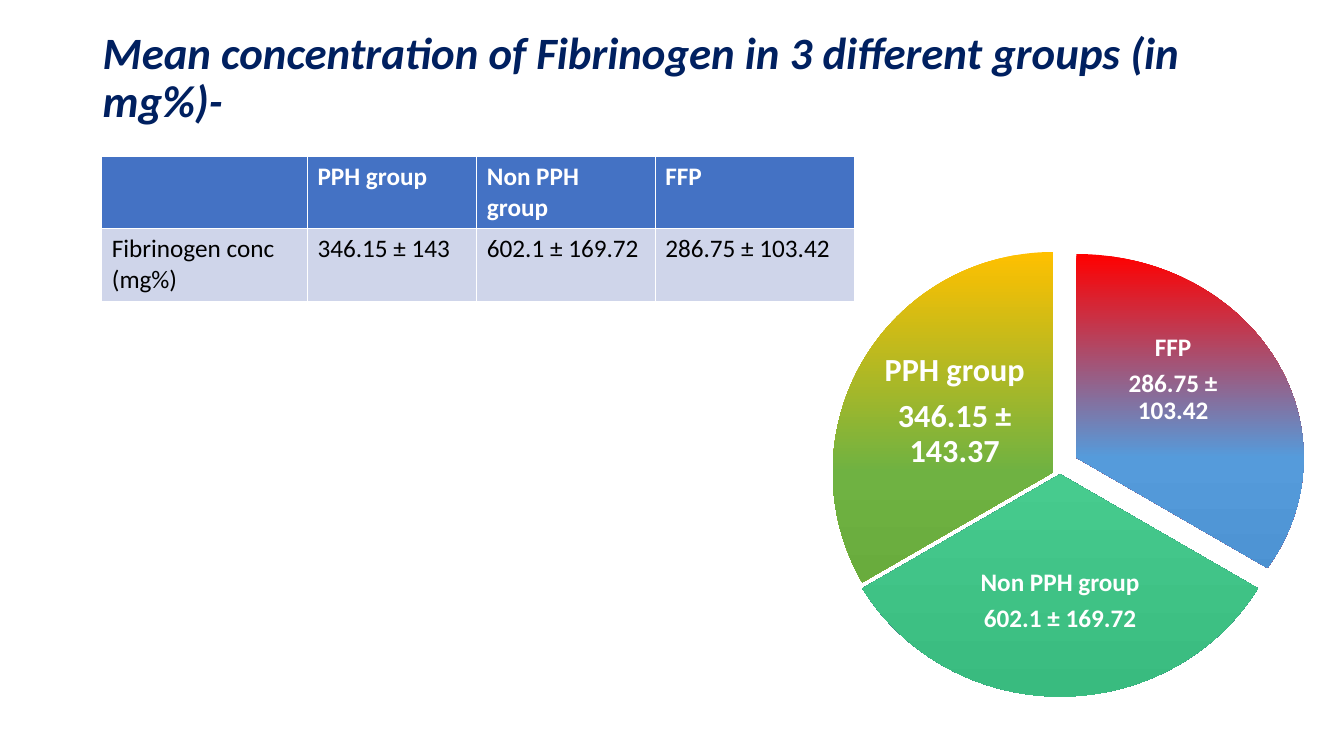
"""Build a slide comparing mean fibrinogen concentration in three groups."""
from copy import deepcopy

from pptx import Presentation
from pptx.dml.color import RGBColor
from pptx.enum.shapes import MSO_SHAPE
from pptx.enum.text import MSO_ANCHOR, PP_ALIGN
from pptx.util import Inches, Pt

NAVY = RGBColor(0x00, 0x20, 0x60)
WHITE = RGBColor(0xFF, 0xFF, 0xFF)
BLACK = RGBColor(0x00, 0x00, 0x00)
HEADER_BLUE = RGBColor(0x44, 0x72, 0xC4)
ROW_BLUE = RGBColor(0xCF, 0xD5, 0xEA)
RED = RGBColor(0xFF, 0x00, 0x00)
SKY = RGBColor(0x55, 0x9B, 0xDB)
SKY_DARK = RGBColor(0x44, 0x8A, 0xCA)
MINT = RGBColor(0x47, 0xCB, 0x8E)
MINT_DARK = RGBColor(0x39, 0xBB, 0x7F)
GOLD = RGBColor(0xFF, 0xC0, 0x00)
GREEN = RGBColor(0x6F, 0xB2, 0x42)
GREEN_DARK = RGBColor(0x62, 0xA3, 0x36)


def write(p, text, size=18, color=WHITE, bold=True, italic=False):
    r = p.add_run()
    r.text = text
    r.font.name = "Calibri"
    r.font.size = Pt(size)
    r.font.color.rgb = color
    r.font.bold = bold
    r.font.italic = italic


prs = Presentation()
prs.slide_width, prs.slide_height = Inches(13.33), Inches(7.5)
s = prs.slides.add_slide(prs.slide_layouts[6])

title = s.shapes.add_textbox(Inches(0.92), Inches(0.4), Inches(11.76), Inches(0.77))
tf = title.text_frame
tf.word_wrap = True
tf.vertical_anchor = MSO_ANCHOR.MIDDLE
tf.paragraphs[0].line_spacing = 0.9
write(tf.paragraphs[0], "Mean concentration of Fibrinogen in 3 different groups (in mg%)-",
      size=32, color=NAVY, italic=True)

rows = [
    ["", "PPH group", "Non PPH group", "FFP"],
    ["Fibrinogen conc (mg%)", "346.15 ± 143", "602.1 ± 169.72", "286.75 ± 103.42"],
]
row_formats = [(HEADER_BLUE, WHITE, True), (ROW_BLUE, BLACK, False)]
table = s.shapes.add_table(2, 4, Inches(1.01), Inches(1.55), Inches(7.47), Inches(1.44)).table
for column, width in zip(table.columns, [2.04, 1.68, 1.77, 1.98]):
    column.width = Inches(width)
for row, texts, (fill, color, bold) in zip(table.rows, rows, row_formats):
    row.height = Inches(0.72)
    for cell, text in zip(row.cells, texts):
        cell.fill.solid()
        cell.fill.fore_color.rgb = fill
        write(cell.text_frame.paragraphs[0], text, color=color, bold=bold)

slices = [
    ((8.42, 2.52, 4.51, 4.04), 270, 30, (RED, SKY, SKY_DARK)),
    ((8.23, 2.5, 4.57, 4.41), 30, 150, (NAVY, MINT, MINT_DARK)),
    ((8.26, 2.5, 4.37, 4.37), 150, 270, (GOLD, GREEN, GREEN_DARK)),
]
for box, start, end, colors in slices:
    sp = s.shapes.add_shape(MSO_SHAPE.PIE, *[Inches(v) for v in box])
    sp.adjustments[0] = start * 0.6
    sp.adjustments[1] = end * 0.6
    sp.shadow.inherit = False
    sp.line.fill.background()
    sp.fill.gradient()
    sp.fill.gradient_angle = 270
    gs_list = sp.element.spPr.xpath("./a:gradFill/a:gsLst")[0]
    gs_list.append(deepcopy(gs_list[-1]))
    for stop, position, color in zip(sp.fill.gradient_stops, (0, 0.5, 1), colors):
        stop.position = position
        stop.color.rgb = color

labels = [
    ((10.87, 3.27, 1.53, 0.99), 18, ["FFP", "286.75 ± 103.42"]),
    ((9.48, 5.28, 2.07, 1.37), 18, ["Non PPH group", "602.1 ± 169.72"]),
    ((8.73, 3.35, 1.48, 1.46), 23, ["PPH group", "346.15 ± 143.37"]),
]
for box, size, lines in labels:
    tf = s.shapes.add_textbox(*[Inches(v) for v in box]).text_frame
    tf.word_wrap = True
    tf.vertical_anchor = MSO_ANCHOR.MIDDLE
    tf.margin_left = tf.margin_right = tf.margin_top = tf.margin_bottom = Inches(0.03)
    for i, line in enumerate(lines):
        p = tf.add_paragraph() if i else tf.paragraphs[0]
        p.alignment = PP_ALIGN.CENTER
        p.line_spacing = 0.9
        p.space_after = Pt(size * 0.35)
        write(p, line, size=size)

prs.save("out.pptx")
